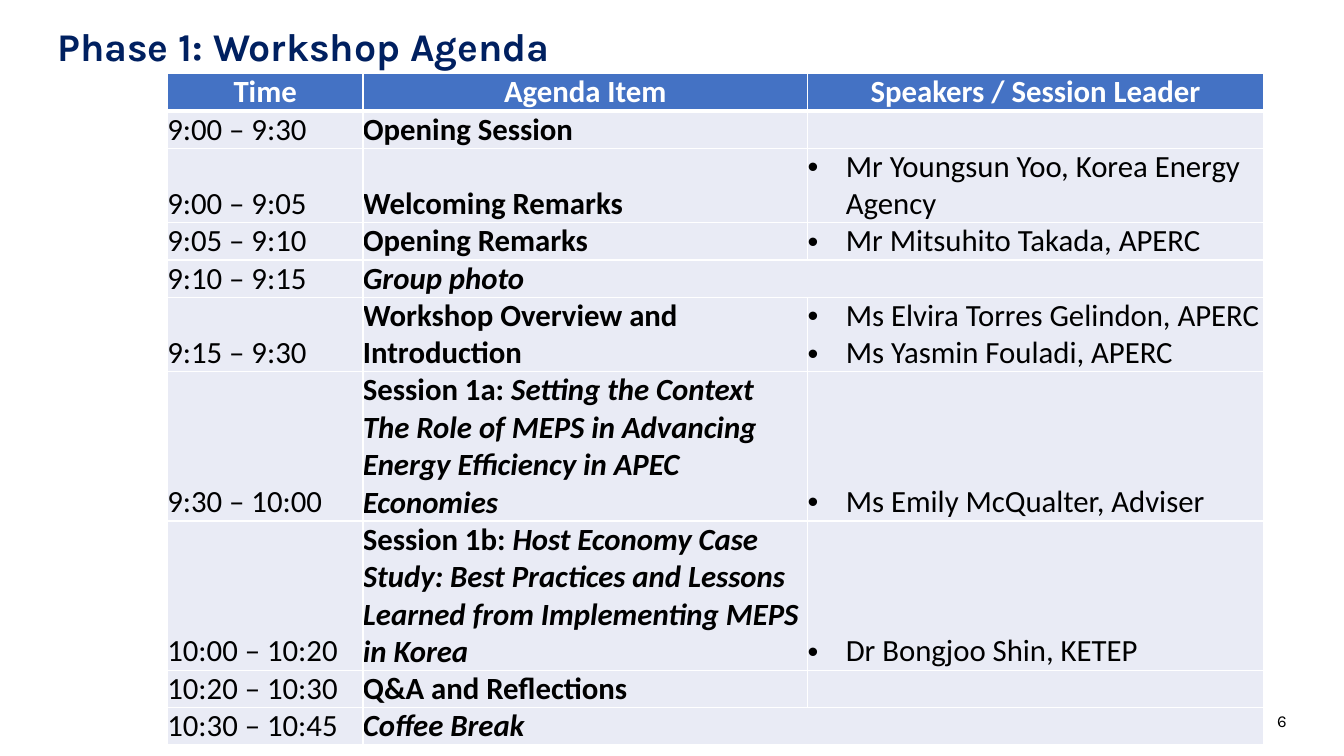
from lxml import etree
from pptx import Presentation
from pptx.dml.color import RGBColor
from pptx.enum.text import MSO_ANCHOR, PP_ALIGN
from pptx.oxml.ns import qn
from pptx.util import Pt

PX = 9144  # one hundredth of an inch
NAVY = RGBColor(0x00, 0x20, 0x60)
BLUE = RGBColor(0x44, 0x72, 0xC4)
PALE = RGBColor(0xE9, 0xEB, 0xF5)
WHITE = RGBColor(0xFF, 0xFF, 0xFF)
BLACK = RGBColor(0x00, 0x00, 0x00)
LEFT, CENTER, RIGHT = PP_ALIGN.LEFT, PP_ALIGN.CENTER, PP_ALIGN.RIGHT
MIDDLE, BOTTOM, TOP = MSO_ANCHOR.MIDDLE, MSO_ANCHOR.BOTTOM, MSO_ANCHOR.TOP

LINE = 37
INDENT = 38
COLS = [194, 441, 452]
HEADS = ["Time", "Agenda Item", "Speakers / Session Leader"]
# time, upright text, italic lines, speakers (None joins the last two cells), text lines
AGENDA = [
    ("9:00 – 9:30", "Opening Session", [], [], 1),
    ("9:00 – 9:05", "Welcoming Remarks", [],
     ["Mr Youngsun Yoo, Korea Energy Agency"], 2),
    ("9:05 – 9:10", "Opening Remarks", [], ["Mr Mitsuhito Takada, APERC"], 1),
    ("9:10 – 9:15", "", ["Group photo"], None, 1),
    ("9:15 – 9:30", "Workshop Overview and Introduction", [],
     ["Ms Elvira Torres Gelindon, APERC", "Ms Yasmin Fouladi, APERC"], 2),
    ("9:30 – 10:00", "Session 1a: ",
     ["Setting the Context",
      "The Role of MEPS in Advancing Energy Efficiency in APEC Economies"],
     ["Ms Emily McQualter, Adviser"], 4),
    ("10:00 – 10:20", "Session 1b: ",
     ["Host Economy Case Study: Best Practices and Lessons Learned "
      "from Implementing MEPS in Korea"],
     ["Dr Bongjoo Shin, KETEP"], 4),
    ("10:20 – 10:30", "Q&A and Reflections", [], [], 1),
    ("10:30 – 10:45", "", ["Coffee Break"], None, 1),
]


class Deck:
    def __init__(self, wide, high):
        self.prs = Presentation()
        self.prs.slide_width, self.prs.slide_height = wide * PX, high * PX
        self.slide = self.prs.slides.add_slide(self.prs.slide_layouts[6])

    def font(self, para, size, color, bold=False, name="Calibri"):
        font = para.font
        font.name, font.size, font.bold = name, Pt(size), bold
        font.color.rgb = color

    def text(self, words, box, size, color, bold=False, align=LEFT, anchor=MIDDLE):
        frame = self.slide.shapes.add_textbox(*(n * PX for n in box)).text_frame
        frame.word_wrap, frame.vertical_anchor = True, anchor
        para = frame.paragraphs[0]
        para.text, para.alignment = words, align
        self.font(para, size, color, bold, "Karla")
        return para

    def table(self, left, top, cols, highs):
        frame = self.slide.shapes.add_table(
            len(highs), len(cols), left * PX, top * PX, sum(cols) * PX, sum(highs) * PX)
        grid = frame.table
        grid.horz_banding = False
        for col, wide in zip(grid.columns, cols):
            col.width = wide * PX
        for row, high in zip(grid.rows, highs):
            row.height = high * PX
        return grid

    def cell(self, cell, fill, anchor, over=1, under=1):
        """Fill a cell and rule it in white; over and under are line widths in points."""
        cell.margin_left = cell.margin_right = cell.margin_top = cell.margin_bottom = 0
        cell.vertical_anchor = anchor
        props = cell._tc.get_or_add_tcPr()
        for side, width in zip("LRTB", (1, 1, over, under)):
            line = etree.SubElement(props, qn(f"a:ln{side}"), w=str(Pt(width)))
            solid = etree.SubElement(line, qn("a:solidFill"))
            etree.SubElement(solid, qn("a:srgbClr"), val=str(WHITE))
        cell.fill.solid()
        cell.fill.fore_color.rgb = fill
        self.font(cell.text_frame.paragraphs[0], 22, BLACK)

    def head(self, cell, words):
        self.cell(cell, BLUE, TOP, under=3)
        para = cell.text_frame.paragraphs[0]
        para.text, para.alignment = words, CENTER
        self.font(para, 22, WHITE, True)

    def item(self, cell, plain, slanted):
        """Write bold text, upright first and then italic, one line per string."""
        para = cell.text_frame.paragraphs[0]
        if plain:
            para.add_run().text = plain
        for i, words in enumerate(slanted):
            if i:
                para.add_line_break()
            run = para.add_run()
            run.text, run.font.italic = words, True
        self.font(para, 22, BLACK, True)

    def bullets(self, cell, names):
        frame = cell.text_frame
        for i, name in enumerate(names):
            para = frame.add_paragraph() if i else frame.paragraphs[0]
            para.text = name
            props = para._p.get_or_add_pPr()
            props.set("marL", str(INDENT * PX))
            props.set("indent", str(-INDENT * PX))
            for old in list(props):
                props.remove(old)
            etree.SubElement(props, qn("a:buFont"), typeface="Arial")
            etree.SubElement(props, qn("a:buChar"), char="•")
            self.font(para, 22, BLACK)


def main():
    deck = Deck(1333, 750)
    title = deck.text("Phase 1: Workshop Agenda", (47, 15, 1239, 59), 28, NAVY,
                      bold=True, anchor=BOTTOM)
    title.line_spacing = 0.9

    highs = [LINE] + [LINE * row[-1] for row in AGENDA]
    grid = deck.table(166, 73, COLS, highs)
    for col, words in enumerate(HEADS):
        deck.head(grid.cell(0, col), words)
    for row, (time, plain, slanted, names, _) in enumerate(AGENDA, 1):
        cells = [grid.cell(row, col) for col in range(len(COLS))]
        for cell in cells:
            deck.cell(cell, PALE, BOTTOM, over=3 if row == 1 else 1)
        cells[0].text_frame.paragraphs[0].text = time
        deck.item(cells[1], plain, slanted)
        if names is None:
            cells[1].merge(cells[2])
        else:
            deck.bullets(cells[2], names)

    deck.text("6", (986, 695, 300, 40), 12, BLACK, align=RIGHT)
    deck.prs.save("out.pptx")


if __name__ == "__main__":
    main()
